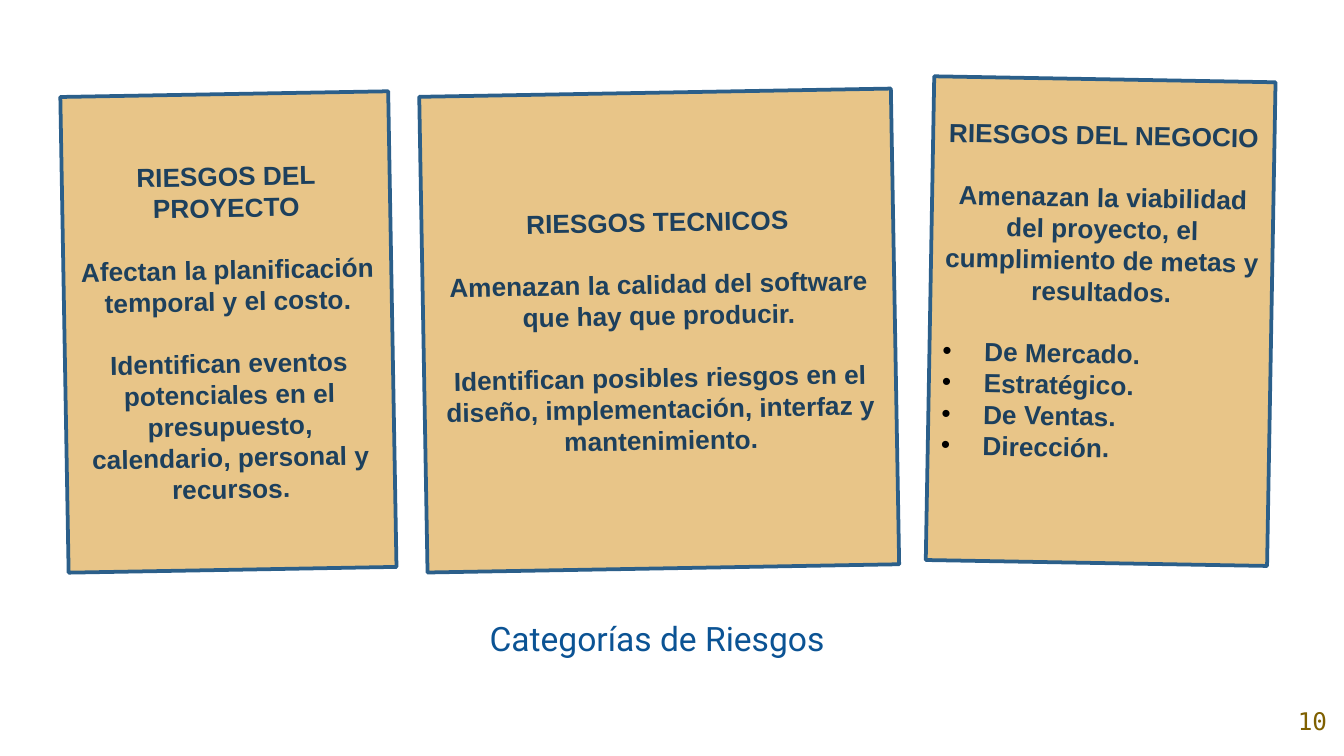
from lxml import etree
from pptx import Presentation
from pptx import util as u
from pptx.dml.color import RGBColor
from pptx.enum import shapes, text
from pptx.oxml import ns

COLORS = {
    "title": "0B5394",
    "number": "7F6000",
    "card": "E8C588",
    "border": "2B5F8A",
    "body": "1D405D",
    "bullet": "000000",
}
BODY_SIZE = 14
PARAGRAPH_GAP = 16.5  # points, about one line of body text
BULLET_INDENT = u.Inches(0.31)

# Left, top, width, height, rotation, paragraphs, bullets
CARDS = [
    (0.48, 0.7, 2.44, 3.54, 359,
     ["RIESGOS DEL PROYECTO",
      "Afectan la planificación temporal y el costo.",
      "Identifican eventos potenciales en el presupuesto, calendario, "
      "personal y recursos."],
     []),
    (3.15, 0.69, 3.51, 3.54, 359,
     ["RIESGOS TECNICOS",
      "Amenazan la calidad del software que hay que producir.",
      "Identifican posibles riesgos en el diseño, implementación, "
      "interfaz y mantenimiento."],
     []),
    (6.92, 0.59, 2.54, 3.6, 1,
     ["RIESGOS DEL NEGOCIO",
      "Amenazan la viabilidad del proyecto, el cumplimiento de metas "
      "y resultados."],
     ["De Mercado.", "Estratégico.", "De Ventas.", "Dirección."]),
]


def color(name):
    return RGBColor.from_string(COLORS[name])


def write(para, words, font="Arial", size=BODY_SIZE, ink="body", bold=False,
          align=text.PP_ALIGN.CENTER, before=0):
    """Fill a paragraph with one formatted span."""
    para.alignment = align
    if before:
        para.space_before = u.Pt(before)
    span = para.add_run()
    span.text = words
    span.font.name = font
    span.font.size = u.Pt(size)
    span.font.bold = bold
    span.font.color.rgb = color(ink)


def add_bullet(para):
    """Give a paragraph a hanging round bullet."""
    props = para._p.get_or_add_pPr()
    props.set("marL", str(BULLET_INDENT))
    props.set("indent", str(-BULLET_INDENT))
    bullet_color = etree.SubElement(props, ns.qn("a:buClr"))
    etree.SubElement(bullet_color, ns.qn("a:srgbClr"), val=COLORS["bullet"])
    etree.SubElement(props, ns.qn("a:buFont"), typeface="Arial")
    etree.SubElement(props, ns.qn("a:buChar"), char="•")


def add_label(page, left, top, width, height, words, **style):
    """Add a centred text box with one line."""
    box = page.shapes.add_textbox(*map(u.Inches, (left, top, width, height)))
    frame = box.text_frame
    frame.word_wrap = True
    frame.vertical_anchor = text.MSO_ANCHOR.MIDDLE
    frame.margin_top = frame.margin_bottom = u.Inches(0.1)
    frame.margin_left = frame.margin_right = u.Inches(0.1)
    write(frame.paragraphs[0], words, **style)


def add_card(page, left, top, width, height, rotation, paragraphs, bullets):
    """Add a tilted card with centred paragraphs and an optional list."""
    card = page.shapes.add_shape(
        shapes.MSO_SHAPE.RECTANGLE,
        *map(u.Inches, (left, top, width, height)))
    card.rotation = rotation
    card.shadow.inherit = False
    card.fill.solid()
    card.fill.fore_color.rgb = color("card")
    card.line.color.rgb = color("border")
    card.line.width = u.Pt(2)

    frame = card.text_frame
    frame.word_wrap = True
    frame.vertical_anchor = text.MSO_ANCHOR.MIDDLE
    for index, words in enumerate(paragraphs):
        para = frame.add_paragraph() if index else frame.paragraphs[0]
        write(para, words, bold=True, before=PARAGRAPH_GAP if index else 0)
    for index, words in enumerate(bullets):
        para = frame.add_paragraph()
        add_bullet(para)
        write(para, words, bold=True, align=text.PP_ALIGN.LEFT,
              before=0 if index else PARAGRAPH_GAP)
    if bullets:
        # Space under the list lifts the text above the middle
        frame.margin_bottom = u.Inches(0.5)


def main():
    deck = Presentation()
    deck.slide_width = u.Inches(10)
    deck.slide_height = deck.slide_width * 9 // 16
    page = deck.slides.add_slide(deck.slide_layouts[6])

    # Title and page number
    add_label(page, 2.91, 4.24, 3.96, 1.02, "Categorías de Riesgos",
              font="Roboto", size=18, ink="title")
    add_label(page, 9.53, 5.11, 0.47, 0.51, "10",
              font="DejaVu Sans Mono", size=13, ink="number")

    # Risk categories
    for card in CARDS:
        add_card(page, *card)

    deck.save("out.pptx")


if __name__ == "__main__":
    main()
